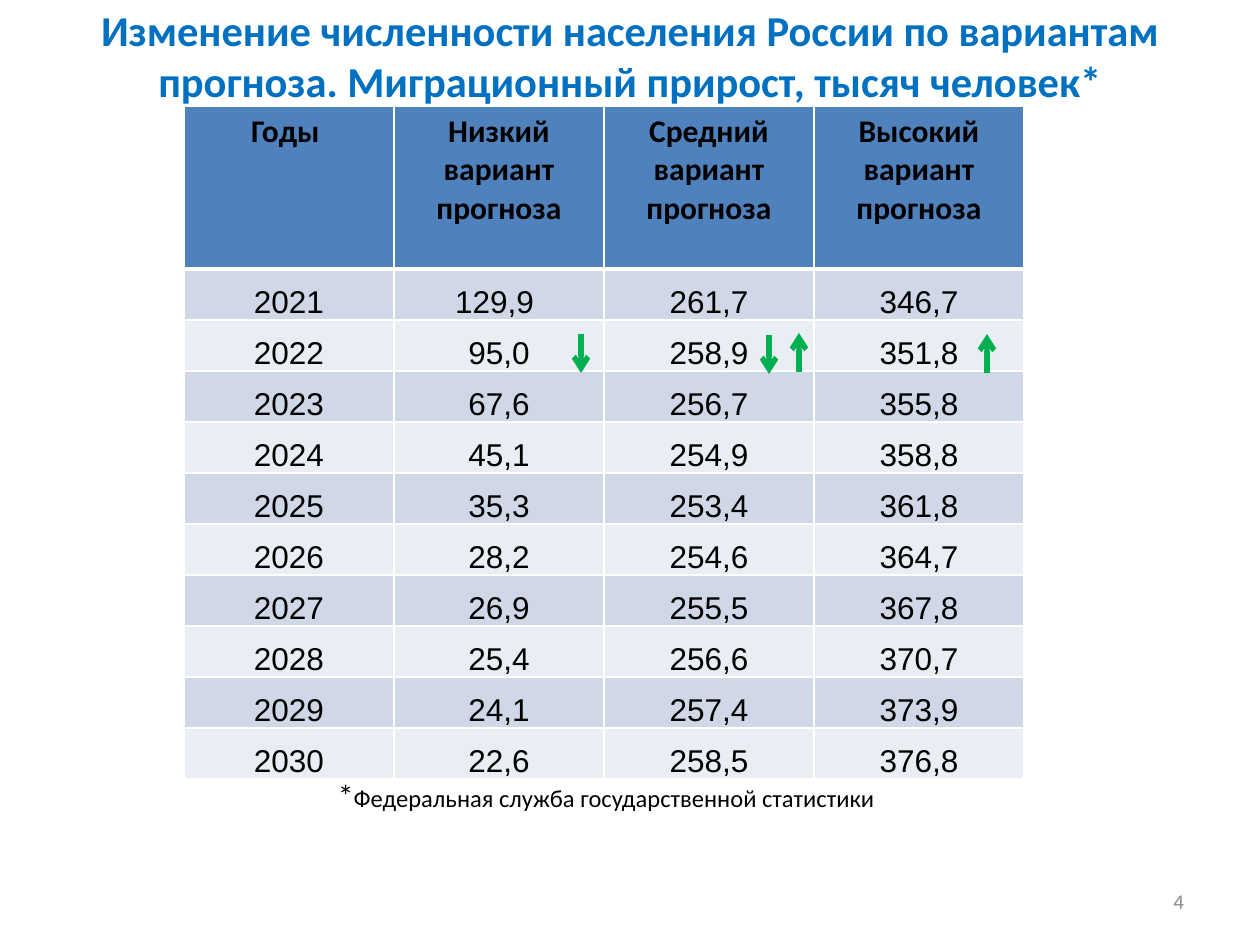
from lxml import etree
from pptx import Presentation, util as u
from pptx.dml.color import RGBColor
from pptx.enum import shapes, text
from pptx.oxml import parse_xml
from pptx.oxml.ns import nsdecls, qn

PX = u.Inches(1) / 126
BLUE = RGBColor(0x00, 0x70, 0xC0)
GREEN = RGBColor(0x00, 0xB0, 0x50)
GRAY = RGBColor(0x8C, 0x8C, 0x8C)
BLACK = RGBColor(0, 0, 0)
WHITE = RGBColor(255, 255, 255)
HEADER = RGBColor(0x4F, 0x81, 0xBD)
BANDS = RGBColor(0xD0, 0xD8, 0xE8), RGBColor(0xE9, 0xED, 0xF4)

COLUMN, HEADER_ROW, DATA_ROW = 210, 163, 51
HEADINGS = ("Годы ", "Низкий вариант прогноза", "Средний вариант прогноза",
            "Высокий вариант прогноза")
FORECAST = (
    ("2021", "129,9 ", "261,7", "346,7"),
    ("2022", "95,0", "258,9", "351,8"),
    ("2023", "67,6", "256,7", "355,8"),
    ("2024", "45,1", "254,9", "358,8"),
    ("2025", "35,3", "253,4", "361,8"),
    ("2026", "28,2", "254,6", "364,7"),
    ("2027", "26,9", "255,5", "367,8"),
    ("2028", "25,4", "256,6", "370,7"),
    ("2029", "24,1", "257,4", "373,9"),
    ("2030", "22,6", "258,5", "376,8"),
)
# x, start y, end y
TRENDS = ((581, 334, 373), (987, 373, 334), (799, 372, 333), (769, 335, 374))


def px(length):
    return u.Emu(round(length * PX))


def set_font(font, color=BLACK, **formats):
    for name, value in {"name": "Calibri", **formats}.items():
        setattr(font, name, value)
    font.color.rgb = color


def add_text(page, place, spans, align, anchor, inset=13):
    """Add a one-paragraph box; spans are (text, font formats) pairs."""
    box = page.shapes.add_textbox(*map(px, place))
    frame = box.text_frame
    formats = {"word_wrap": True, "vertical_anchor": anchor,
               "margin_left": px(inset), "margin_right": px(inset)}
    for name, value in formats.items():
        setattr(frame, name, value)
    para = frame.paragraphs[0]
    para.alignment = align
    for words, font in spans:
        span = para.add_run()
        span.text = words
        set_font(span.font, **font)


def set_borders(cell, **widths):
    """Draw white cell borders, 1 pt unless a side is given another width."""
    props = cell._tc.get_or_add_tcPr()
    for side in "LRTB":
        width = u.Pt(widths.get(side, 1))
        props.append(parse_xml(
            f'<a:ln{side} {nsdecls("a")} w="{width}"><a:solidFill>'
            f'<a:srgbClr val="{WHITE}"/></a:solidFill></a:ln{side}>'))


def fill_cell(cell, words, fill, **font):
    cell.fill.solid()
    cell.fill.fore_color.rgb = fill
    para = cell.text_frame.paragraphs[0]
    para.alignment = text.PP_ALIGN.CENTER
    span = para.add_run()
    span.text = words
    set_font(span.font, size=u.Pt(18), **font)


def add_forecast_table(page, left, top):
    rows, columns = len(FORECAST) + 1, len(HEADINGS)
    height = HEADER_ROW + DATA_ROW * len(FORECAST)
    place = map(px, (left, top, COLUMN * columns, height))
    table = page.shapes.add_table(rows, columns, *place).table
    for column in table.columns:
        column.width = px(COLUMN)
    for index, row in enumerate(table.rows):
        row.height = px(DATA_ROW if index else HEADER_ROW)

    for column, heading in enumerate(HEADINGS):
        cell = table.cell(0, column)
        set_borders(cell, B=3)
        fill_cell(cell, heading, HEADER, bold=True)
    data_format = {"vertical_anchor": text.MSO_ANCHOR.BOTTOM, "margin_left": px(1),
                   "margin_right": px(1), "margin_top": px(1), "margin_bottom": 0}
    for index, values in enumerate(FORECAST):
        for column, value in enumerate(values):
            cell = table.cell(index + 1, column)
            for name, setting in data_format.items():
                setattr(cell, name, setting)
            set_borders(cell, T=1 if index else 3)
            fill_cell(cell, value, BANDS[index % 2], name="Arial", bold=False)


def add_trend_arrow(page, x, start, end):
    arrow = page.shapes.add_connector(
        shapes.MSO_CONNECTOR.STRAIGHT, px(x), px(start), px(x), px(end))
    arrow.line.color.rgb = GREEN
    arrow.line.width = u.Pt(3)
    etree.SubElement(arrow.line._get_or_add_ln(), qn("a:tailEnd"), type="arrow")
    etree.SubElement(arrow._element.spPr, qn("a:effectLst"))


def main():
    deck = Presentation()
    deck.slide_width, deck.slide_height = px(1260), px(945)
    page = deck.slides.add_slide(deck.slide_layouts[6])
    align, anchor = text.PP_ALIGN, text.MSO_ANCHOR

    title = ("Изменение численности населения России по вариантам прогноза. "
             "Миграционный прирост, тысяч человек*")
    add_text(page, (0, 0, 1260, 110),
             [(title, {"size": u.Pt(24.3), "bold": True, "color": BLUE})],
             align.CENTER, anchor.MIDDLE, inset=40)
    add_text(page, (903, 876, 294, 50), [("4", {"size": u.Pt(12), "color": GRAY})],
             align.RIGHT, anchor.MIDDLE)
    add_text(page, (325, 770, 630, 50),
             [("*", {"size": u.Pt(18)}),
              ("Федеральная служба государственной статистики", {"size": u.Pt(14)})],
             align.LEFT, anchor.TOP)
    add_forecast_table(page, 184, 106)
    for trend in TRENDS:
        add_trend_arrow(page, *trend)
    deck.save("out.pptx")


if __name__ == "__main__":
    main()
